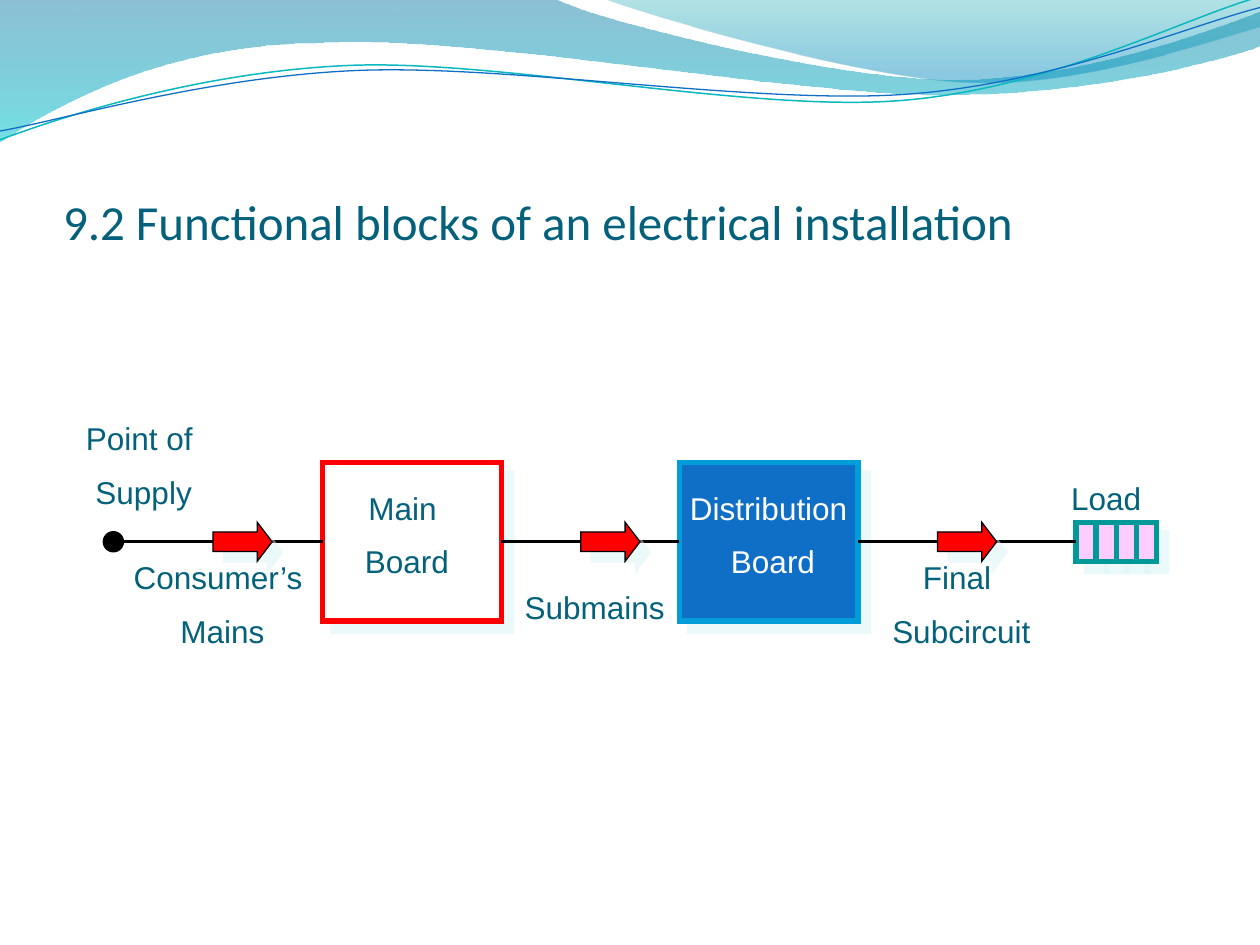
from lxml.etree import SubElement
from pptx import Presentation
from pptx.dml.color import RGBColor
from pptx.enum.shapes import MSO_CONNECTOR as Connector, MSO_SHAPE as Shape
from pptx.enum.text import MSO_ANCHOR as Anchor, MSO_AUTO_SIZE as AutoSize, PP_ALIGN as Align
from pptx.oxml.ns import qn
from pptx.util import Emu, Pt

PX = 9144  # EMU per px, 100 px to the inch
TEAL, WHITE, BLACK, RED, BLUE = "04617B", "FFFFFF", "000000", "FF0000", "0F6FC6"
TITLE = "9.2 Functional blocks of an electrical installation"

# A path is a start point, then steps: one point is a line, three are a Bézier curve.
WAVE_FILLS = [
    ([(0, -1)],
     [[(440, -1)],
      [(476, 17), (664, 63), (758, 63)], [(853, 63), (958, 26), (1000, 9)],
      [(1001, 36)],
      [(983, 44), (870, 76), (746, 75)], [(622, 75), (382, 28), (257, 34)],
      [(129, 35), (46, 83), (-1, 113)]],
     [(0, "0074A1", 45), (1, "00C6CF", 55)]),
    ([(479, -1)],
     [[(509, 11), (682, 62), (769, 65)], [(856, 69), (961, 32), (1000, 21)],
      [(1000, 0)]],
     [(0, "00A1A9", 30), (0.8, "008BBF", 45)]),
]
WAVE_LINES = [
    ([(0, 111)],
     [[(48, 93), (158, 57), (277, 52)],
      [(395, 47), (593, 89), (713, 80)], [(833, 71), (938, 15), (998, -2)]],
     "0AB8BF", 0.85),
    ([(0, 104)],
     [[(47, 96), (164, 61), (283, 56)],
      [(403, 51), (597, 83), (717, 75)], [(836, 67), (941, 21), (1000, 6)]],
     BLUE, 0.75),
]

AXIS = 430  # height of the supply line
BOARDS = [(256, WHITE, RED), (539, BLUE, "009DD9")]  # left, fill, line
BOARD_WIDTH, BOARD_HEIGHT = 142, 126
LOAD_LEFT, CELL_WIDTH, CELL_COUNT = 854, 16, 4
WIRES = [(398, 539), (681, 854), (90, 256)]
ARROW_LEFTS = [169, 461, 744]
ARROW_WIDTH, SYMBOL_HEIGHT, DOT_LEFT, DOT_SIZE = 47, 31, 82, 16
LABELS = [  # left, top, width, colour, lines
    (358, 462, 228, TEAL, ["Submains"]),
    (649, 438, 228, TEAL, ["Final ", "Subcircuit"]),
    (531, 383, 165, WHITE, ["Distribution ", "Board"]),
    (815, 375, 126, TEAL, ["Load"]),
    (256, 383, 134, TEAL, ["Main ", "Board"]),
    (59, 438, 228, TEAL, ["Consumer’s", " Mains"]),
    (0, 328, 228, TEAL, ["Point of ", "Supply"]),
]
LABEL_HEIGHTS = {1: 40, 2: 85}


def emu(*lengths):
    return [Emu(round(length * PX)) for length in lengths]


def rgb(value):
    return RGBColor.from_string(value)


def add_path(page, start, steps, close):
    """Draw an outline through all points, then turn each three-point step into a curve."""
    points = [emu(*point) for point in sum(steps, start)]
    builder = page.shapes.build_freeform(*points[0], scale=1.0)
    builder.add_line_segments(points[1:], close=close)
    shape = builder.convert_to_shape()
    shape.shadow.inherit = False
    lines = iter(list(shape._element.spPr.iter(qn("a:lnTo"))))
    for step in steps:
        parts = [next(lines) for _ in step]
        if len(parts) == 3:
            curve = parts[0]
            curve.tag = qn("a:cubicBezTo")
            for part in parts[1:]:
                curve.append(part[0])
                part.getparent().remove(part)
    return shape


def set_line(shape, colour, width):
    shape.line.color.rgb = rgb(colour)
    shape.line.width = Pt(width)


def add_waves(page):
    for start, steps, stops in WAVE_FILLS:
        wave = add_path(page, start, steps, True)
        wave.line.fill.background()
        wave.fill.gradient()
        wave.fill.gradient_angle = 270
        for stop, (position, colour, _) in zip(wave.fill.gradient_stops, stops):
            stop.position = position
            stop.color.rgb = rgb(colour)
        for element, (_, _, opacity) in zip(wave._element.spPr.iter(qn("a:srgbClr")), stops):
            SubElement(element, qn("a:alpha"), val=str(opacity * 1000))
    for start, steps, colour, width in WAVE_LINES:
        wave = add_path(page, start, steps, False)
        wave.fill.background()
        set_line(wave, colour, width)


def add_block(page, kind, place, fill, line, width, shadow=True):
    block = page.shapes.add_shape(kind, *emu(*place))
    block.fill.solid()
    block.fill.fore_color.rgb = rgb(fill)
    set_line(block, line, width)
    SubElement(block._element.spPr.find(qn("a:ln")), qn("a:miter"), lim="800000")
    block.shadow.inherit = False
    if shadow:
        effects = block._element.spPr.find(qn("a:effectLst"))
        outer = SubElement(effects, qn("a:outerShdw"), dist=str(Pt(8.5)),
                           dir="2700000", algn="ctr", rotWithShape="0")
        colour = SubElement(outer, qn("a:srgbClr"), val="DBF5F9")
        SubElement(colour, qn("a:alpha"), val="50000")
    return block


def add_wire(page, start, end):
    wire = page.shapes.add_connector(Connector.STRAIGHT, *emu(start, AXIS, end, AXIS))
    set_line(wire, BLACK, 1.5)
    SubElement(wire._element.spPr, qn("a:effectLst"))


def add_label(page, left, top, width, colour, lines):
    box = page.shapes.add_textbox(*emu(left, top, width, LABEL_HEIGHTS[len(lines)]))
    frame = box.text_frame
    frame.word_wrap = True
    frame.auto_size = AutoSize.SHAPE_TO_FIT_TEXT
    frame.text = "\n".join(lines)
    for index, para in enumerate(frame.paragraphs):
        para.alignment = Align.CENTER
        if index:
            para.space_before = Pt(9)
        para.font.name = "Arial"
        para.font.size = Pt(18)
        para.font.color.rgb = rgb(colour)


def set_title(page):
    title = page.shapes.title
    title.left, title.top, title.width, title.height = emu(50, 77, 900, 125)
    frame = title.text_frame
    frame.text = TITLE
    frame.vertical_anchor = Anchor.BOTTOM
    frame.margin_left = frame.margin_right = 0
    frame.margin_bottom = Pt(2.5)
    para = frame.paragraphs[0]
    para.alignment = Align.LEFT
    para.font.name = "Calibri"
    para.font.size = Pt(28)
    para.font.color.rgb = rgb(TEAL)


def main():
    deck = Presentation()
    deck.slide_width, deck.slide_height = emu(1000, 750)
    page = deck.slides.add_slide(deck.slide_layouts[5])
    set_title(page)
    add_waves(page)

    for left, fill, line in BOARDS:
        place = left, AXIS - BOARD_HEIGHT / 2, BOARD_WIDTH, BOARD_HEIGHT
        add_block(page, Shape.RECTANGLE, place, fill, line, 3)
    symbol_top = AXIS - SYMBOL_HEIGHT / 2
    for index in range(CELL_COUNT):
        place = LOAD_LEFT + index * CELL_WIDTH, symbol_top, CELL_WIDTH, SYMBOL_HEIGHT
        add_block(page, Shape.RECTANGLE, place, "FFCCFF", "009999", 3)

    for start, end in WIRES:
        add_wire(page, start, end)
    dot = DOT_LEFT, AXIS - DOT_SIZE / 2, DOT_SIZE, DOT_SIZE
    add_block(page, Shape.OVAL, dot, BLACK, BLACK, 0.75, shadow=False)
    for left in ARROW_LEFTS:
        place = left, symbol_top, ARROW_WIDTH, SYMBOL_HEIGHT
        arrow = add_block(page, Shape.RIGHT_ARROW, place, RED, BLACK, 0.75)
        arrow.adjustments[1] = 0.38
    for label in LABELS:
        add_label(page, *label)
    deck.save("out.pptx")


if __name__ == "__main__":
    main()
